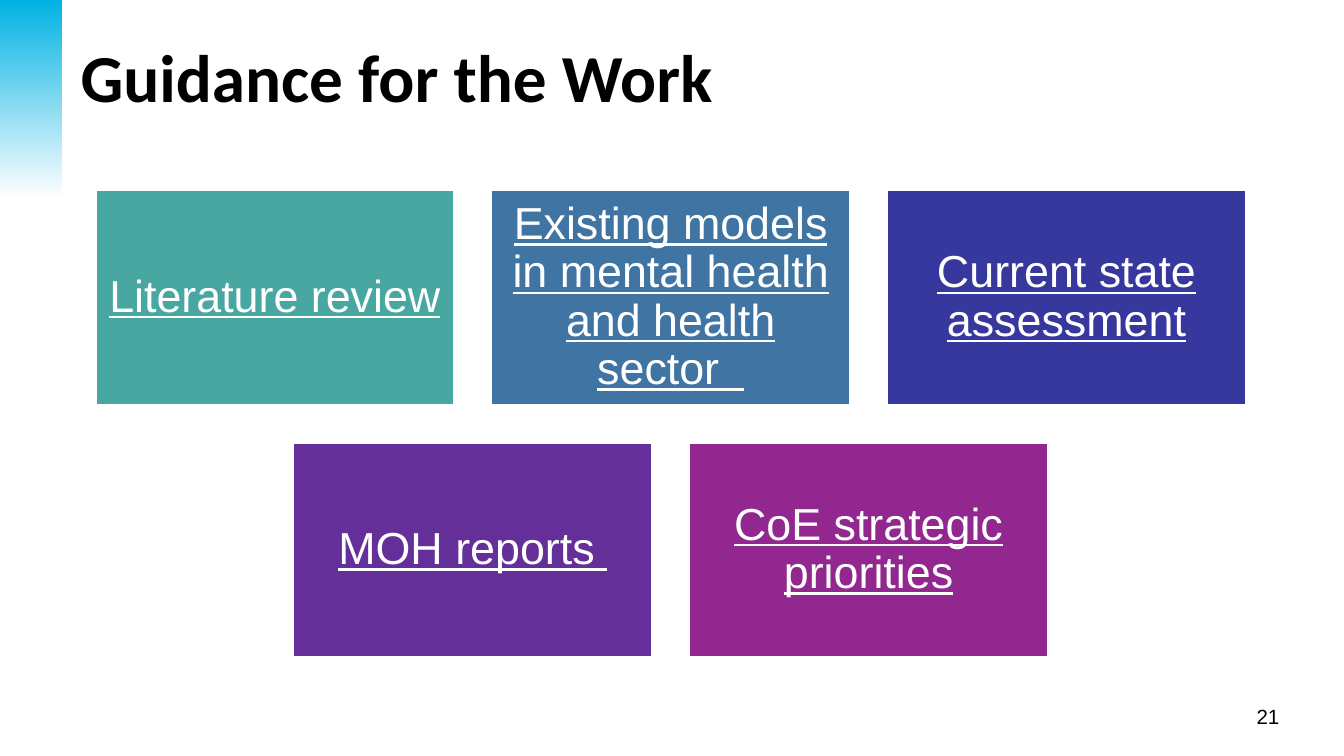
import pptx
import pptx.util
import pptx.dml.color
import pptx.enum.shapes
import pptx.enum.text

Cm = pptx.util.Cm
Pt = pptx.util.Pt
RECT = pptx.enum.shapes.MSO_SHAPE.RECTANGLE
ALIGN = pptx.enum.text.PP_ALIGN
ANCHOR = pptx.enum.text.MSO_ANCHOR


def rgb(hex_code):
    return pptx.dml.color.RGBColor.from_string(hex_code)


def add_run(p, text, font, size, color):
    r = p.add_run()
    r.text = text
    r.font.name = font
    r.font.size = Pt(size)
    r.font.color.rgb = rgb(color)
    return r


prs = pptx.Presentation()
prs.slide_width = Cm(25.4)
prs.slide_height = Cm(14.29)
s = prs.slides.add_slide(prs.slide_layouts[5])

sp = s.shapes.add_shape(RECT, 0, 0, Cm(1.17), Cm(3.76))
sp.shadow.inherit = False
sp.line.fill.background()
sp.fill.gradient()
sp.fill.gradient_angle = 270
for stop, color, position in zip(sp.fill.gradient_stops, ["00B2E3", "FFFFFF"], [0, 1]):
    stop.color.rgb = rgb(color)
    stop.position = position

title = s.shapes.title
title.left, title.top, title.width, title.height = Cm(1.27), Cm(0.46), Cm(22.86), Cm(2.44)
tf = title.text_frame
tf.auto_size = pptx.enum.text.MSO_AUTO_SIZE.NONE
tf.vertical_anchor = ANCHOR.TOP
tf.margin_top = Cm(0.2)
p = tf.paragraphs[0]
p.alignment = ALIGN.LEFT
add_run(p, "Guidance for the Work", "Calibri", 36, "000000").font.bold = True

rows = [
    [("Literature review", "49A7A2"),
     ("Existing models in mental health and health sector  ", "4074A3"),
     ("Current state assessment", "37389E")],
    [("MOH reports ", "642F98"),
     ("CoE strategic priorities", "92278F")],
]
left, top, width, height = 1.79, 3.58, 6.81, 4.09
col_step, row_step = 7.48, 4.77

for i, row in enumerate(rows):
    indent = (len(rows[0]) - len(row)) * col_step / 2
    for j, (text, color) in enumerate(row):
        sp = s.shapes.add_shape(RECT, Cm(left + indent + j * col_step),
                                Cm(top + i * row_step), Cm(width), Cm(height))
        sp.shadow.inherit = False
        sp.fill.solid()
        sp.fill.fore_color.rgb = rgb(color)
        sp.line.color.rgb = rgb("FFFFFF")
        sp.line.width = Pt(2)
        tf = sp.text_frame
        tf.word_wrap = True
        tf.vertical_anchor = ANCHOR.MIDDLE
        tf.margin_left = tf.margin_right = tf.margin_top = tf.margin_bottom = Cm(0.25)
        p = tf.paragraphs[0]
        p.alignment = ALIGN.CENTER
        p.line_spacing = 0.9
        add_run(p, text, "Arial", 24, "FFFFFF").font.underline = True

sp = s.shapes.add_textbox(Cm(21.46), Cm(13.18), Cm(2.97), Cm(0.74))
tf = sp.text_frame
tf.word_wrap = True
p = tf.paragraphs[0]
p.alignment = ALIGN.RIGHT
add_run(p, "21", "Arial", 11, "000000")

prs.save("out.pptx")
